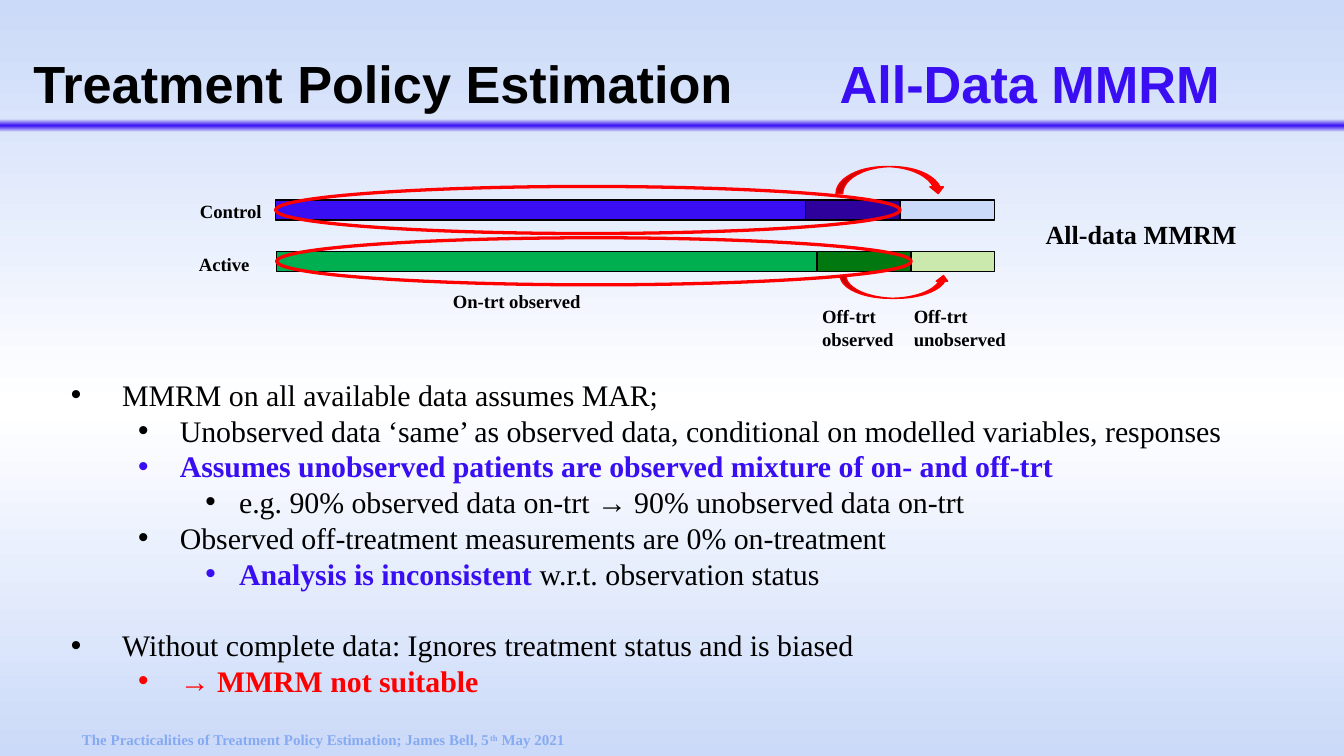
from dataclasses import dataclass

from lxml import etree
from pptx import Presentation
from pptx.dml.color import RGBColor
from pptx.enum.shapes import MSO_SHAPE
from pptx.enum.text import MSO_ANCHOR, MSO_AUTO_SIZE, PP_ALIGN
from pptx.oxml.ns import qn
from pptx.util import Cm, Pt

RECTANGLE = MSO_SHAPE.RECTANGLE
ELLIPSE = MSO_SHAPE.OVAL
ARROW_OVER = MSO_SHAPE.CURVED_DOWN_ARROW
ARROW_UNDER = MSO_SHAPE.CURVED_UP_ARROW

SERIF, SANS = "Times New Roman", "Arial"
BLACK, BLUE, RED, PALE_BLUE = "000000", "390EF2", "FF0000", "CBDAF9"
FOOTER_BLUE = "86AAF2"
BAR_HEIGHT, RING_HEIGHT = 0.38, 0.89
LINE_PITCH = Pt(19.2)
INDENTS = [(0.97, -0.97), (2.06, -0.79), (3.18, -0.64)]


@dataclass
class Piece:
    text: str
    color: str = BLACK
    bold: bool = False
    superscript: bool = False


@dataclass
class Bullet:
    level: int
    pieces: list[Piece]
    new_block: bool = False


@dataclass
class Arm:
    """Treatment arm: on-trt, off-trt observed and off-trt unobserved segments."""
    top: float
    edges: tuple[float, ...]
    colors: tuple[str, ...]


@dataclass
class Label:
    text: str
    box: tuple[float, float, float, float]
    size: float = 10
    wrap: bool = False


ARMS = [
    Arm(3.78, (5.21, 15.22, 17.01, 18.8), (BLUE, "2E019D", PALE_BLUE)),
    Arm(4.75, (5.23, 15.44, 17.22, 18.8), ("00B050", "027810", "CCE9AD")),
]

LABELS = [
    Label("Control", (3.53, 3.66, 1.7, 0.69)),
    Label("Active", (3.51, 4.65, 1.5, 0.69)),
    Label("On-trt observed", (8.31, 5.36, 2.97, 0.69)),
    Label("Off-trt observed", (15.29, 5.64, 2.59, 1.12), wrap=True),
    Label("Off-trt unobserved", (17.02, 5.64, 3.23, 1.12), wrap=True),
    Label("All-data MMRM", (19.51, 4.01, 4.17, 0.86), size=14),
]

BULLETS = [
    Bullet(0, [Piece("MMRM on all available data assumes MAR;")]),
    Bullet(1, [Piece("Unobserved data ‘same’ as observed data, conditional on "
                     "modelled variables, responses")]),
    Bullet(1, [Piece("Assumes unobserved patients are observed mixture of on- "
                     "and off-trt", BLUE, True)]),
    Bullet(2, [Piece("e.g. 90% observed data on-trt → 90% unobserved data on-trt")]),
    Bullet(1, [Piece("Observed off-treatment measurements are 0% on-treatment")]),
    Bullet(2, [Piece("Analysis is inconsistent ", BLUE, True),
               Piece("w.r.t. observation status")]),
    Bullet(0, [Piece("Without complete data: Ignores treatment status and is biased")],
           new_block=True),
    Bullet(1, [Piece("→ MMRM not suitable", RED, True)]),
]


def rgb(color: str) -> RGBColor:
    return RGBColor.from_string(color)


def set_gradient(fill, owner, angle: int, stops: list[tuple[int, str, int]]) -> None:
    """Stops are (position %, colour, opacity %); owner is the XML holding the fill."""
    fill.gradient()
    gradient = owner.find(".//" + qn("a:gradFill"))
    stop_list = gradient.find(qn("a:gsLst"))
    for old_stop in list(stop_list):
        stop_list.remove(old_stop)
    for position, color, opacity in stops:
        stop = etree.SubElement(stop_list, qn("a:gs"), pos=str(position * 1000))
        tint = etree.SubElement(stop, qn("a:srgbClr"), val=color)
        if opacity < 100:
            etree.SubElement(tint, qn("a:alpha"), val=str(opacity * 1000))
    gradient.find(qn("a:lin")).set("ang", str(angle * 60000))


def add_pieces(paragraph, pieces: list[Piece], size: float, font: str = SERIF) -> None:
    for piece in pieces:
        run = paragraph.add_run()
        run.text = piece.text
        run.font.name = font
        run.font.size = Pt(size)
        run.font.bold = piece.bold
        run.font.color.rgb = rgb(piece.color)
        if piece.superscript:
            run._r.get_or_add_rPr().set("baseline", "30000")


def add_text_frame(slide, box: tuple[float, ...], wrap: bool = True):
    frame = slide.shapes.add_textbox(*map(Cm, box)).text_frame
    frame.word_wrap = wrap
    return frame


def add_figure(slide, kind, box: tuple[float, ...], fill: str | None = None,
               line: str | None = None, line_width: float = 0.75):
    figure = slide.shapes.add_shape(kind, *map(Cm, box))
    figure.shadow.inherit = False
    if fill:
        figure.fill.solid()
        figure.fill.fore_color.rgb = rgb(fill)
    else:
        figure.fill.background()
    if line:
        figure.line.color.rgb = rgb(line)
        figure.line.width = Pt(line_width)
    else:
        figure.line.fill.background()
    return figure


def add_title(slide) -> None:
    title = slide.shapes.title
    title.left, title.top, title.width, title.height = map(Cm, (0.38, 0.58, 25.02, 1.52))
    frame = title.text_frame
    frame.auto_size = MSO_AUTO_SIZE.NONE
    frame.vertical_anchor = MSO_ANCHOR.TOP
    frame.margin_left = frame.margin_right = Cm(0.25)
    frame.margin_top, frame.margin_bottom = Cm(0.38), 0
    paragraph = frame.paragraphs[0]
    paragraph.alignment = PP_ALIGN.LEFT
    paragraph._p.get_or_add_pPr().set("defTabSz", str(Cm(2.54)))
    add_pieces(paragraph, [Piece("Treatment Policy Estimation\t", bold=True),
                           Piece("All-Data MMRM", BLUE, True)], 28, SANS)


def add_arm(slide, arm: Arm) -> None:
    for left, right, color in zip(arm.edges, arm.edges[1:], arm.colors):
        add_figure(slide, RECTANGLE, (left, arm.top, right - left, BAR_HEIGHT), color, BLACK)


def add_observed_ring(slide, arm: Arm) -> None:
    top = arm.top - (RING_HEIGHT - BAR_HEIGHT) / 2
    width = arm.edges[2] - arm.edges[0]
    add_figure(slide, ELLIPSE, (arm.edges[0], top, width, RING_HEIGHT),
               line=RED, line_width=1.75)


def add_bullets(slide) -> None:
    frame = add_text_frame(slide, (1.09, 6.99, 23.39, 6.4))
    for index, bullet in enumerate(BULLETS):
        paragraph = frame.add_paragraph() if index else frame.paragraphs[0]
        paragraph.level = bullet.level
        paragraph.line_spacing = LINE_PITCH
        paragraph.space_before = LINE_PITCH if bullet.new_block else 0
        margin, hanging = INDENTS[bullet.level]
        properties = paragraph._p.get_or_add_pPr()
        properties.set("marL", str(Cm(margin)))
        properties.set("indent", str(Cm(hanging)))
        etree.SubElement(properties, qn("a:buFont"), typeface=SANS)
        etree.SubElement(properties, qn("a:buChar"), char="•")
        add_pieces(paragraph, bullet.pieces, 16)


def main() -> None:
    deck = Presentation()
    deck.slide_width, deck.slide_height = Cm(25.4), Cm(14.29)
    slide = deck.slides.add_slide(deck.slide_layouts[5])
    set_gradient(slide.background.fill, slide.element, 270,
                 [(0, PALE_BLUE, 100), (46, "FFFFFF", 100), (100, PALE_BLUE, 100)])

    rule = add_figure(slide, RECTANGLE, (0, 2.26, 25.4, 0.23))
    set_gradient(rule.fill, rule._element, 90,
                 [(0, BLUE, 0), (50, BLUE, 100), (100, BLUE, 0)])
    add_title(slide)
    add_bullets(slide)

    for arm in ARMS:
        add_arm(slide, arm)
    for label in LABELS:
        frame = add_text_frame(slide, label.box, label.wrap)
        add_pieces(frame.paragraphs[0], [Piece(label.text, bold=True)], label.size)
    for arm in ARMS:
        add_observed_ring(slide, arm)
    add_figure(slide, ARROW_OVER, (15.8, 3.15, 2.06, 0.51), RED, RED)
    add_figure(slide, ARROW_UNDER, (15.88, 5.21, 2.06, 0.43), RED, RED)

    footer = add_text_frame(slide, (1.3, 13.69, 22.4, 0.58))
    add_pieces(footer.paragraphs[0], [
        Piece("The Practicalities of Treatment Policy Estimation; James Bell, 5",
              FOOTER_BLUE, True),
        Piece("th", FOOTER_BLUE, True, superscript=True),
        Piece(" May 2021", FOOTER_BLUE, True),
    ], 8)
    deck.save("out.pptx")


if __name__ == "__main__":
    main()
